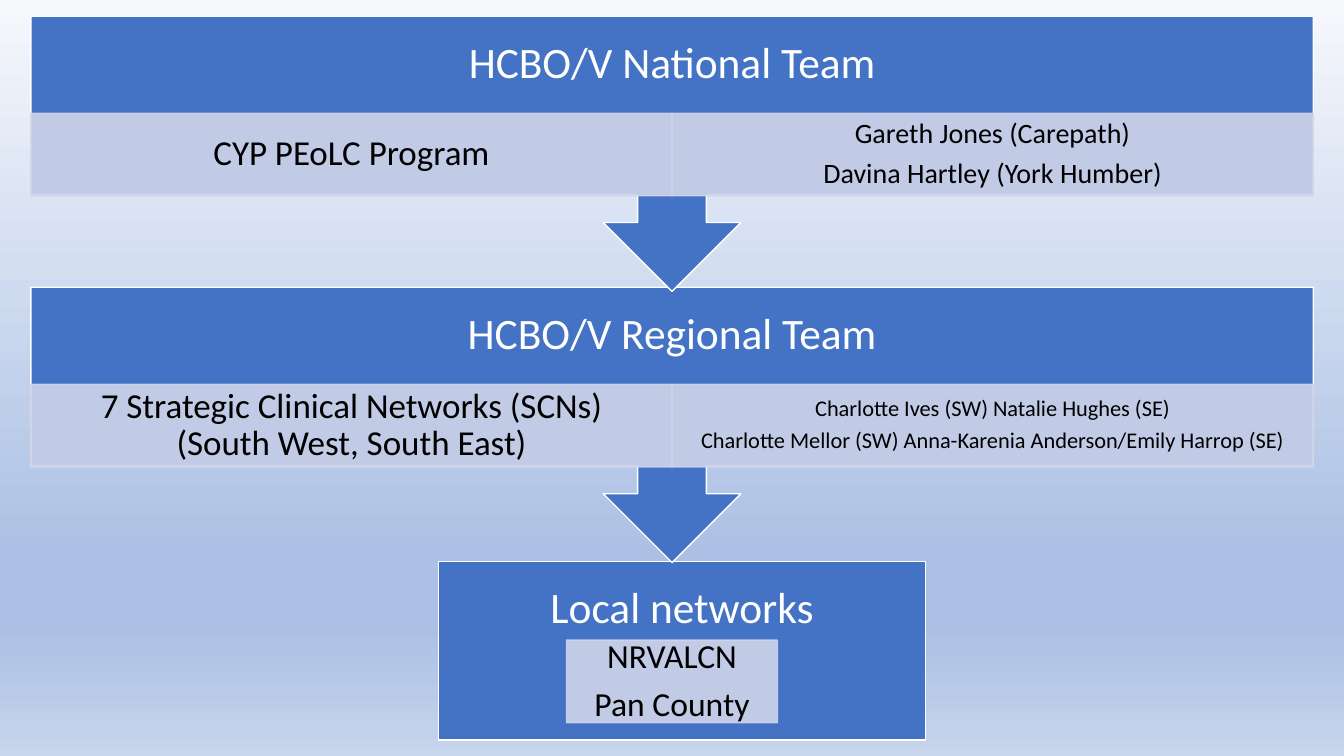
from dataclasses import dataclass

from lxml.etree import SubElement
from pptx import Presentation
from pptx.dml.color import RGBColor as RGB
from pptx.enum.shapes import MSO_SHAPE as SHAPE
from pptx.enum.text import MSO_ANCHOR as ANCHOR, PP_ALIGN as ALIGN
from pptx.oxml.ns import qn
from pptx.util import Pt


@dataclass(frozen=True)
class Theme:
    font: str = "Calibri"
    blue: str = "4472C4"
    pale: str = "CFD5EA"
    white: str = "FFFFFF"
    black: str = "000000"
    sky: tuple = ((0, "F6F8FC"), (74, "ABC0E4"), (83, "ABC0E4"), (100, "C7D5ED"))
    heading: int = 31
    body: int = 25
    local: int = 24
    leads: int = 20
    small: int = 16


T = Theme()
SLIDE_W, SLIDE_H = 960, 540
HEAD_H, PANEL_H = 69.4, 59


def paint_background(s):
    fill = s.background.fill
    fill.gradient()
    fill.gradient_angle = 270
    stops = s.element.find(".//" + qn("a:gsLst"))
    for stop in list(stops):
        stops.remove(stop)
    for pos, color in T.sky:
        stop = SubElement(stops, qn("a:gs"), pos=str(pos * 1000))
        SubElement(stop, qn("a:srgbClr"), val=color)


def write(shape, paragraphs, size, color, inset):
    """Fill a shape with centred paragraphs; each is a tuple of lines."""
    tf = shape.text_frame
    tf.word_wrap = True
    tf.vertical_anchor = ANCHOR.MIDDLE
    tf.margin_left = tf.margin_right = Pt(inset[0])
    tf.margin_top = tf.margin_bottom = Pt(inset[1])
    for i, lines in enumerate(paragraphs):
        p = tf.paragraphs[0] if i == 0 else tf.add_paragraph()
        p.alignment = ALIGN.CENTER
        p.line_spacing = 0.9
        p.space_after = Pt(round(size * 0.35, 1))
        for j, line in enumerate(lines):
            if j:
                p.add_line_break()
            r = p.add_run()
            r.text = line
            r.font.name, r.font.size = T.font, Pt(size)
            r.font.color.rgb = RGB.from_string(color)


def add_block(s, kind, box, fill, line):
    sp = s.shapes.add_shape(kind, *map(Pt, box))
    sp.shadow.inherit = False
    sp.fill.solid()
    sp.fill.fore_color.rgb = RGB.from_string(fill)
    sp.line.color.rgb = RGB.from_string(line)
    sp.line.width = Pt(1)
    return sp


def add_heading(s, x, y, w, text):
    tb = s.shapes.add_textbox(*map(Pt, (x, y, w, HEAD_H)))
    write(tb, [(text,)], T.heading, T.white, (17, 17))


def add_panel(s, x, y, w, paragraphs, size):
    sp = add_block(s, SHAPE.RECTANGLE, (x, y, w, PANEL_H), T.pale, T.pale)
    for color in sp.element.spPr.iter(qn("a:srgbClr")):
        SubElement(color, qn("a:alpha"), val="90000")
    write(sp, paragraphs, size, T.black, (round(size * 0.56, 1), 2))


def add_team(s, box, heading, panels):
    """A wide callout pointing down, with equal panels under its heading."""
    x, y, w, h = box
    add_block(s, SHAPE.UP_ARROW_CALLOUT, box, T.blue, T.white).rotation = 180
    add_heading(s, x, y, w, heading)
    panel_w = w / len(panels)
    for i, (paragraphs, size) in enumerate(panels):
        add_panel(s, x + i * panel_w, y + HEAD_H, panel_w, paragraphs, size)


def add_local(s, box, heading, paragraphs):
    x, y, w, h = box
    add_block(s, SHAPE.RECTANGLE, box, T.blue, T.white)
    add_heading(s, x, y, w, heading)
    panel_w = 150.6
    add_panel(s, (SLIDE_W - panel_w) / 2, y + 56.2, panel_w, paragraphs, T.local)


def main():
    prs = Presentation()
    prs.slide_width, prs.slide_height = Pt(SLIDE_W), Pt(SLIDE_H)
    s = prs.slides.add_slide(prs.slide_layouts[6])
    paint_background(s)

    team_w, team_h = 916, 196.6
    left = (SLIDE_W - team_w) / 2

    # Local tier, at the back so that the arrow tips overlap downwards
    add_local(s, (313.2, 401, 347.8, 127.5), "Local networks",
              [("NRVALCN",), ("Pan County",)])

    # Regional tier
    add_team(s, (left, 205.2, team_w, team_h), "HCBO/V Regional Team", [
        ([("7 Strategic Clinical Networks (SCNs)",
           "(South West, South East)")], T.body),
        ([("Charlotte Ives (SW) Natalie Hughes (SE)",),
          ("Charlotte Mellor (SW) Anna-Karenia Anderson/Emily Harrop (SE)",)],
         T.small),
    ])

    # National tier
    add_team(s, (left, 11.5, team_w, team_h), "HCBO/V National Team", [
        ([("CYP PEoLC Program",)], T.body),
        ([("Gareth Jones (Carepath)",), ("Davina Hartley (York Humber)",)],
         T.leads),
    ])

    prs.save("out.pptx")


if __name__ == "__main__":
    main()
